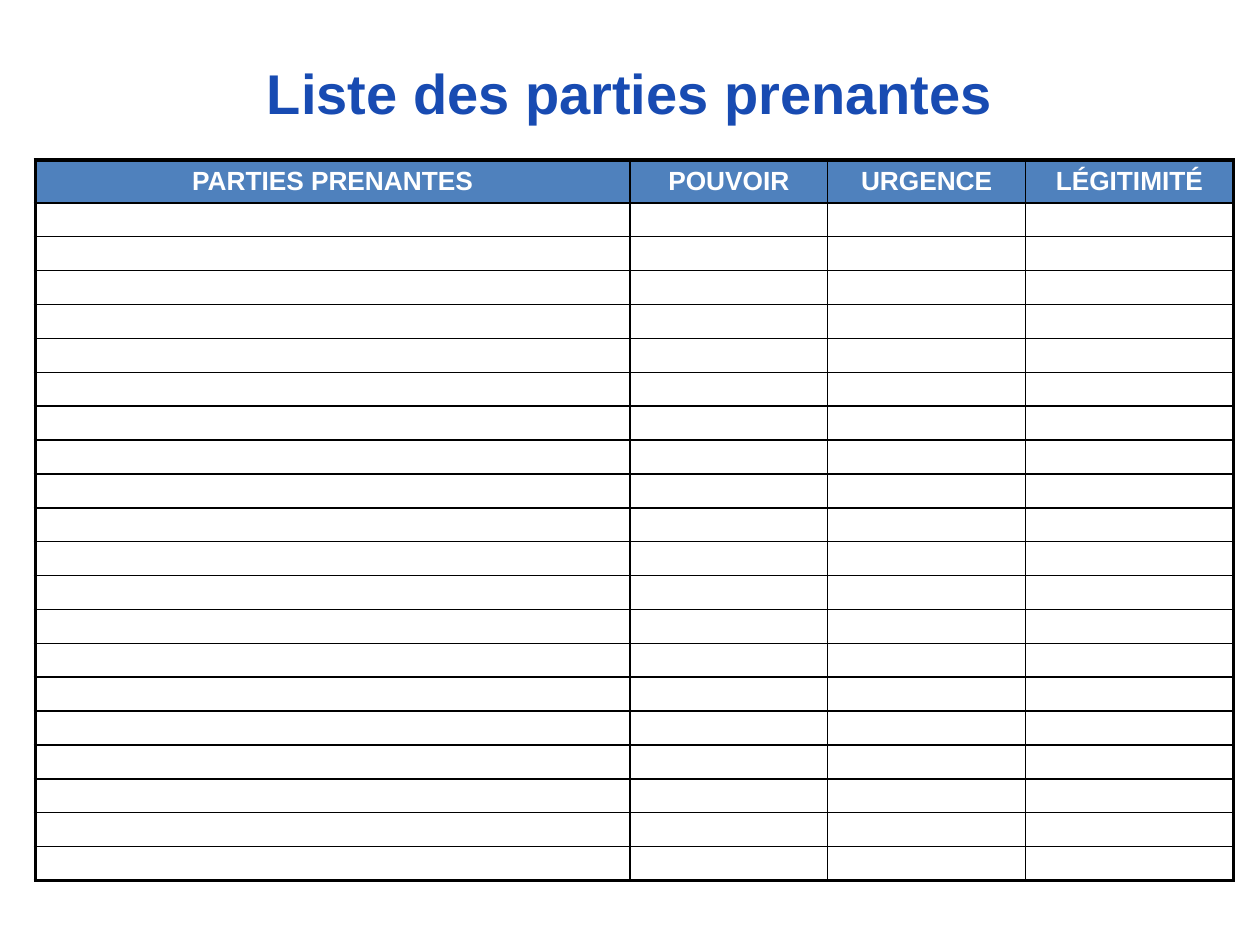
from dataclasses import dataclass

from lxml import etree
from pptx import Presentation
from pptx.dml.color import RGBColor
from pptx.enum import text
from pptx.oxml import ns
from pptx.util import Inches, Pt


@dataclass(frozen=True)
class Theme:
    font: str = "Arial"
    title_color: str = "184BB2"
    header_fill: str = "4F81BD"
    header_color: str = "FFFFFF"
    body_fill: str = "FFFFFF"
    border_color: str = "000000"
    title_size: float = 32
    header_size: float = 15
    body_size: float = 10
    inner_border: float = 1
    outer_border: float = 2.25


THEME = Theme()
HEADINGS = ["PARTIES PRENANTES", "POUVOIR", "URGENCE", "LÉGITIMITÉ"]
COLUMN_WIDTHS = [4.72, 1.57, 1.57, 1.65]
BLANK_ROWS = 20
TABLE_HEIGHT = 5.68
HEADER_HEIGHT = 0.34


def add_text(paragraph, wording, size, color):
    paragraph.alignment = text.PP_ALIGN.CENTER
    run = paragraph.add_run()
    run.text = wording
    run.font.name = THEME.font
    run.font.size = Pt(size)
    run.font.bold = True
    run.font.color.rgb = RGBColor.from_string(color)


def add_title(slide, wording):
    title = slide.shapes.title
    title.left, title.top = Inches(0.5), Inches(0.3)
    title.width, title.height = Inches(9), Inches(0.87)
    title.text_frame.vertical_anchor = text.MSO_ANCHOR.MIDDLE
    add_text(title.text_frame.paragraphs[0], wording,
             THEME.title_size, THEME.title_color)


def set_borders(cell, outer_sides):
    properties = cell._tc.get_or_add_tcPr()
    for side, is_outer in outer_sides.items():
        width = THEME.outer_border if is_outer else THEME.inner_border
        line = etree.SubElement(properties, ns.qn(f"a:ln{side}"), w=str(Pt(width)))
        fill = etree.SubElement(line, ns.qn("a:solidFill"))
        etree.SubElement(fill, ns.qn("a:srgbClr"), val=THEME.border_color)


def set_fill(cell, color):
    cell.fill.solid()
    cell.fill.fore_color.rgb = RGBColor.from_string(color)


def set_blank_size(cell):
    # The end mark keeps an empty row from growing to the default text size
    paragraph = cell.text_frame.paragraphs[0]._p
    etree.SubElement(paragraph, ns.qn("a:endParaRPr"),
                     sz=str(int(THEME.body_size * 100)))


def add_stakeholder_table(slide):
    row_count, column_count = BLANK_ROWS + 1, len(HEADINGS)
    table = slide.shapes.add_table(
        row_count, column_count, Inches(0.28), Inches(1.27),
        Inches(sum(COLUMN_WIDTHS)), Inches(TABLE_HEIGHT)).table
    table.first_row = table.horz_banding = False

    # Column widths and equal blank rows under the header
    for column, width in zip(table.columns, COLUMN_WIDTHS):
        column.width = Inches(width)
    blank_height = (TABLE_HEIGHT - HEADER_HEIGHT) / BLANK_ROWS
    for index, row in enumerate(table.rows):
        row.height = Inches(blank_height if index else HEADER_HEIGHT)

    # Thick frame, thin inner grid
    for row in range(row_count):
        for column in range(column_count):
            cell = table.cell(row, column)
            set_borders(cell, {"L": column == 0, "R": column == column_count - 1,
                               "T": row == 0, "B": row == row_count - 1})
            if row == 0:
                set_fill(cell, THEME.header_fill)
                cell.vertical_anchor = text.MSO_ANCHOR.MIDDLE
                add_text(cell.text_frame.paragraphs[0], HEADINGS[column],
                         THEME.header_size, THEME.header_color)
            else:
                set_fill(cell, THEME.body_fill)
                set_blank_size(cell)


def main():
    presentation = Presentation()
    presentation.slide_width, presentation.slide_height = Inches(10), Inches(7.5)
    slide = presentation.slides.add_slide(presentation.slide_layouts[5])
    add_stakeholder_table(slide)
    add_title(slide, "Liste des parties prenantes")
    presentation.save("out.pptx")


if __name__ == "__main__":
    main()
